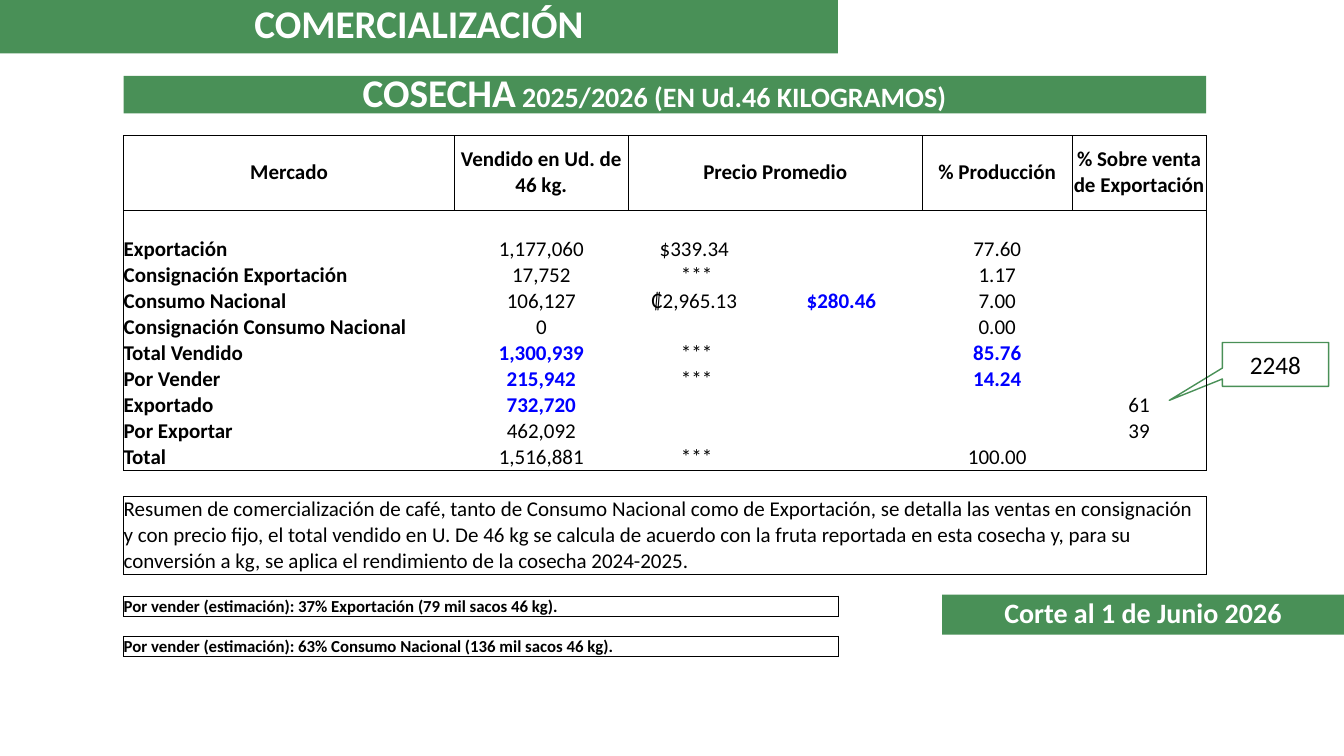
"""Builds the coffee harvest marketing slide."""
from dataclasses import dataclass

from lxml import etree
from pptx import Presentation, slide as sl, table as tb, util as u
from pptx.dml import color
from pptx.enum import shapes, text
from pptx.oxml import ns
from pptx.text import text as tx

SLIDE_WIDTH, SLIDE_HEIGHT = u.Inches(13.33), u.Inches(7.5)
CENTER, LEFT = text.PP_ALIGN.CENTER, text.PP_ALIGN.LEFT
MIDDLE, TOP, BOTTOM = text.MSO_ANCHOR.MIDDLE, text.MSO_ANCHOR.TOP, text.MSO_ANCHOR.BOTTOM


@dataclass(frozen=True)
class Theme:
    font: str = "Calibri"
    green: str = "499057"
    black: str = "000000"
    blue: str = "0000FF"
    white: str = "FFFFFF"
    title: int = 28
    subtitle: int = 20
    callout: int = 18
    body: int = 15
    note: int = 12


THEME = Theme()


@dataclass(frozen=True)
class Area:
    """Left, top, width and height as percentages of the slide."""
    left: float
    top: float
    width: float
    height: float

    def lengths(self) -> tuple[int, int, int, int]:
        return across(self.left), down(self.top), across(self.width), down(self.height)


@dataclass(frozen=True)
class Band:
    area: Area
    spans: tuple[tuple[str, int], ...]
    anchor: text.MSO_ANCHOR = MIDDLE
    right_margin: float = 0.1


@dataclass(frozen=True)
class MarketRow:
    name: str
    sold: str = ""
    price: str = ""
    dollars: str = ""
    share: str = ""
    exported: str = ""
    blue: tuple[int, ...] = ()

    def values(self) -> tuple[str, ...]:
        return self.name, self.sold, self.price, self.dollars, self.share, self.exported


BANDS = (
    Band(Area(9.2, 10.05, 80.54, 4.95),
         (("COSECHA", THEME.title), (" 2025/2026 (EN Ud.46 KILOGRAMOS)", THEME.subtitle)),
         right_margin=0.3),
    Band(Area(70.1, 78.65, 29.9, 5.3), (("Corte al 1 de Junio 2026", THEME.subtitle),)),
    Band(Area(0, 0, 62.35, 7.05), (("COMERCIALIZACIÓN", THEME.title),), TOP),
)
HEADINGS = ("Mercado", "Vendido en Ud. de 46 kg.", "Precio Promedio", "",
            "% Producción", "% Sobre venta de Exportación")
MARKETS = (
    MarketRow(""),
    MarketRow("Exportación", "1,177,060", "$339.34 ", share="77.60"),
    MarketRow("Consignación Exportación", "17,752", "***", share="1.17"),
    MarketRow("Consumo Nacional", "106,127", "₡2,965.13 ", "$280.46 ", "7.00", blue=(3,)),
    MarketRow("Consignación Consumo Nacional", "0", share="0.00"),
    MarketRow("Total Vendido", "1,300,939", "***", share="85.76", blue=(1, 4)),
    MarketRow("Por Vender", "215,942", "***", share="14.24", blue=(1, 4)),
    MarketRow("Exportado", "732,720", exported="61", blue=(1,)),
    MarketRow("Por Exportar", "462,092", exported="39"),
    MarketRow("Total", "1,516,881", "***", share="100.00"),
)
SUMMARY = ("Resumen de comercialización de café, tanto de Consumo Nacional como de Exportación, "
           "se detalla las ventas en consignación y con precio fijo, el total vendido en U. De 46 kg "
           "se calcula de acuerdo con la fruta reportada en esta cosecha y, para su conversión a kg, "
           "se aplica el rendimiento de la cosecha 2024-2025.")
ESTIMATES = ("Por vender (estimación): 37% Exportación (79 mil sacos 46 kg).", "",
             "Por vender (estimación): 63% Consumo Nacional (136 mil sacos 46 kg).")
MARKET_COLUMNS = (24.62, 12.92, 10.2, 11.7, 11.13, 9.97)
MARKET_LINE = 3.45


def across(percent: float) -> int:
    return round(SLIDE_WIDTH * percent / 100)


def down(percent: float) -> int:
    return round(SLIDE_HEIGHT * percent / 100)


def style(span: tx._Run, size: int, ink: str = THEME.black, bold: bool = False) -> None:
    span.font.name, span.font.size, span.font.bold = THEME.font, u.Pt(size), bold
    span.font.color.rgb = color.RGBColor.from_string(ink)


def draw_band(page: sl.Slide, band: Band) -> None:
    box = page.shapes.add_shape(shapes.MSO_SHAPE.RECTANGLE, *band.area.lengths())
    box.shadow.inherit = False
    box.fill.solid()
    box.fill.fore_color.rgb = color.RGBColor.from_string(THEME.green)
    box.line.fill.background()
    frame = box.text_frame
    frame.word_wrap, frame.vertical_anchor = True, band.anchor
    frame.margin_right = u.Inches(band.right_margin)
    para = frame.paragraphs[0]
    para.alignment, para.line_spacing = CENTER, 0.9
    for words, size in band.spans:
        span = para.add_run()
        span.text = words
        style(span, size, THEME.white, True)


def draw_callout(page: sl.Slide) -> None:
    bubble = page.shapes.add_shape(shapes.MSO_SHAPE.RECTANGULAR_CALLOUT,
                                   *Area(90.95, 45.3, 7.9, 5.8).lengths())
    bubble.shadow.inherit = False
    bubble.fill.background()
    bubble.line.color.rgb = color.RGBColor.from_string(THEME.green)
    bubble.line.width = u.Pt(1)
    bubble.adjustments[0], bubble.adjustments[1] = -1, 0.82
    box = page.shapes.add_textbox(*Area(92.25, 45.5, 5.35, 5.4).lengths())
    box.text_frame.word_wrap = True
    box.text_frame.text = "2248"
    style(box.text_frame.paragraphs[0].runs[0], THEME.callout)


def add_grid(page: sl.Slide, left: float, top: float,
             columns: tuple[float, ...], rows: tuple[float, ...]) -> tb.Table:
    area = Area(left, top, sum(columns), sum(rows))
    grid = page.shapes.add_table(len(rows), len(columns), *area.lengths()).table
    grid.first_row = grid.horz_banding = False
    for column, width in zip(grid.columns, columns):
        column.width = across(width)
    for row, height in zip(grid.rows, rows):
        row.height = down(height)
    return grid


def fill_cell(cell: tb._Cell, words: str, size: int, sides: str, weight: float,
              align: text.PP_ALIGN = LEFT, anchor: text.MSO_ANCHOR = MIDDLE,
              ink: str = THEME.black, bold: bool = False) -> None:
    cell.margin_left = cell.margin_right = cell.margin_top = cell.margin_bottom = 0
    cell.vertical_anchor = anchor
    para = cell.text_frame.paragraphs[0]
    para.alignment = align
    if words:
        para.text = words
        style(para.runs[0], size, ink, bold)
    else:
        etree.SubElement(para._p, ns.qn("a:endParaRPr"), sz=str(size * 100))
    properties = cell._tc.get_or_add_tcPr()
    for side in "LRTB":
        line = etree.SubElement(properties, ns.qn(f"a:ln{side}"), w=str(u.Pt(weight)))
        if side in sides:
            paint = etree.SubElement(line, ns.qn("a:solidFill"))
            etree.SubElement(paint, ns.qn("a:srgbClr"), val=THEME.black)
        else:
            etree.SubElement(line, ns.qn("a:noFill"))
    cell.fill.background()


def draw_markets(page: sl.Slide) -> None:
    last_column, gap = len(HEADINGS) - 1, len(MARKETS) + 1
    heights = (9.87, *(MARKET_LINE,) * gap, 10.3)
    grid = add_grid(page, 9.2, 17.9, MARKET_COLUMNS, heights)
    grid.cell(0, 2).merge(grid.cell(0, 3))
    grid.cell(gap + 1, 0).merge(grid.cell(gap + 1, last_column))
    for column, heading in enumerate(HEADINGS):
        fill_cell(grid.cell(0, column), heading, THEME.body, "LRTB", 0.5, CENTER, bold=True)
        fill_cell(grid.cell(gap, column), "", THEME.body, "TB", 0.5)
        fill_cell(grid.cell(gap + 1, column), "" if column else SUMMARY,
                  THEME.body, "LRTB", 0.5, anchor=TOP)
    for row, market in enumerate(MARKETS, 1):
        for column, words in enumerate(market.values()):
            sides = (("L" if column == 0 else "") + ("R" if column == last_column else "")
                     + ("T" if row == 1 else "") + ("B" if row == gap - 1 else ""))
            blue = column in market.blue
            fill_cell(grid.cell(row, column), words, THEME.body, sides, 0.5,
                      CENTER if column else LEFT, BOTTOM,
                      THEME.blue if blue else THEME.black, blue or column == 0)


def draw_estimates(page: sl.Slide) -> None:
    grid = add_grid(page, 9.2, 78.85, (53.2,), (2.68,) * len(ESTIMATES))
    for row, words in enumerate(ESTIMATES):
        fill_cell(grid.cell(row, 0), words, THEME.note, "LRTB" if words else "TB", 1, bold=True)


def main() -> None:
    deck = Presentation()
    deck.slide_width, deck.slide_height = SLIDE_WIDTH, SLIDE_HEIGHT
    page = deck.slides.add_slide(deck.slide_layouts[6])
    for band in BANDS:
        draw_band(page, band)
    draw_callout(page)
    draw_markets(page)
    draw_estimates(page)
    deck.save("out.pptx")


if __name__ == "__main__":
    main()
